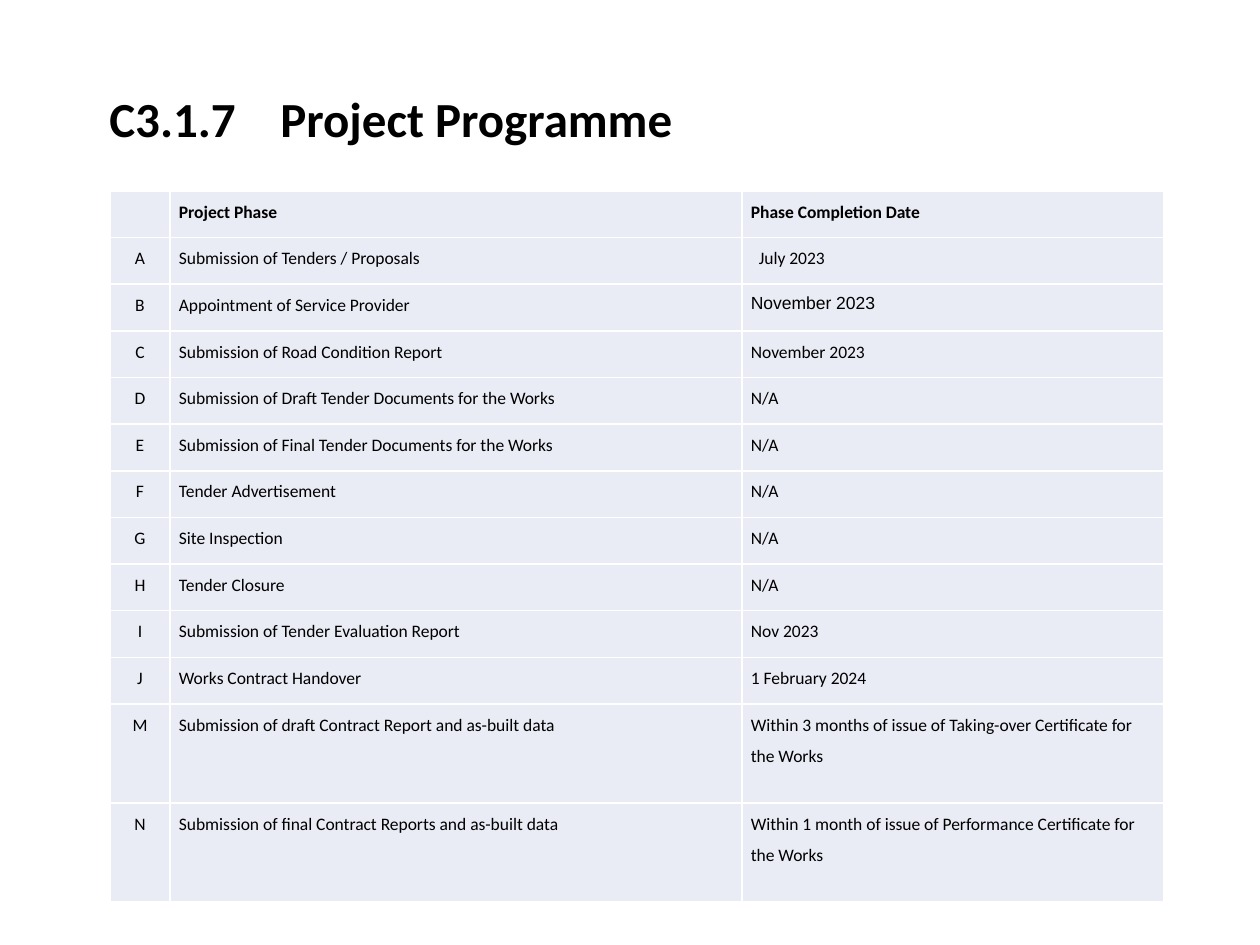
from dataclasses import dataclass

from lxml import etree
from pptx import Presentation
from pptx import util as u
from pptx.dml.color import RGBColor
from pptx.enum import text
from pptx.oxml.ns import qn

PX = u.Inches(1) // 126


@dataclass(frozen=True)
class Theme:
    ink: RGBColor = RGBColor(0x00, 0x00, 0x00)
    cell: RGBColor = RGBColor(0xE9, 0xEB, 0xF5)
    font: str = "Calibri"
    alternate_font: str = "Arial"
    title_size: u.Length = u.Pt(28)
    body_size: u.Length = u.Pt(10)


theme = Theme()


def style(paragraph, size, bold=False, font=theme.font):
    paragraph.font.name = font
    paragraph.font.size = size
    paragraph.font.bold = bold
    paragraph.font.color.rgb = theme.ink


phases = [
    ("", "Project Phase", "Phase Completion Date"),
    ("A", "Submission of Tenders / Proposals", "July 2023"),
    ("B", "Appointment of Service Provider", "November 2023"),
    ("C", "Submission of Road Condition Report", "November 2023"),
    ("D", "Submission of Draft Tender Documents for the Works", "N/A"),
    ("E", "Submission of Final Tender Documents for the Works", "N/A"),
    ("F", "Tender Advertisement", "N/A"),
    ("G", "Site Inspection", "N/A"),
    ("H", "Tender Closure", "N/A"),
    ("I", "Submission of Tender Evaluation Report", "Nov 2023"),
    ("J", "Works Contract Handover", "1 February 2024"),
    ("M", "Submission of draft Contract Report and as-built data",
     "Within 3 months of issue of Taking-over Certificate for the Works"),
    ("N", "Submission of final Contract Reports and as-built data",
     "Within 1 month of issue of Performance Certificate for the Works"),
]
column_widths = (60, 572, 422)
single_rows, single_rows_height = 11, 513
double_row_height = 99

prs = Presentation()
prs.slide_width, prs.slide_height = 1260 * PX, 945 * PX
slide = prs.slides.add_slide(prs.slide_layouts[6])

# Heading, with a tab between number and name
heading = slide.shapes.add_textbox(97 * PX, 89 * PX, 1086 * PX, 64 * PX).text_frame
heading.word_wrap = True
title = heading.paragraphs[0]
title.text = "C3.1.7\tProject Programme"
title.line_spacing = 0.9
tabs = etree.SubElement(title._p.get_or_add_pPr(), qn("a:tabLst"))
etree.SubElement(tabs, qn("a:tab"), pos=str(171 * PX), algn="l")
style(title, theme.title_size, bold=True)

# Programme table
table_height = single_rows_height + 2 * double_row_height
programme = slide.shapes.add_table(
    len(phases), len(column_widths), 110 * PX, 191 * PX,
    sum(column_widths) * PX, table_height * PX).table
programme.first_row = False
programme.horz_banding = False

for column, width in zip(programme.columns, column_widths):
    column.width = width * PX

for r, phase in enumerate(phases):
    programme.rows[r].height = (
        single_rows_height * PX // single_rows if r < single_rows
        else double_row_height * PX)
    for c, wording in enumerate(phase):
        cell = programme.cell(r, c)
        cell.fill.solid()
        cell.fill.fore_color.rgb = theme.cell
        cell.margin_left = cell.margin_right = 9 * PX
        cell.margin_top = cell.margin_bottom = 0
        if not wording:
            continue
        entry = cell.text_frame.paragraphs[0]
        entry.text = wording
        entry.line_spacing = 1.5
        if c == 0:
            entry.alignment = text.PP_ALIGN.CENTER
        style(entry, theme.body_size, bold=r == 0)

programme.cell(1, 2).margin_left = 17 * PX
programme.cell(2, 2).text_frame.paragraphs[0].font.name = theme.alternate_font

prs.save("out.pptx")
